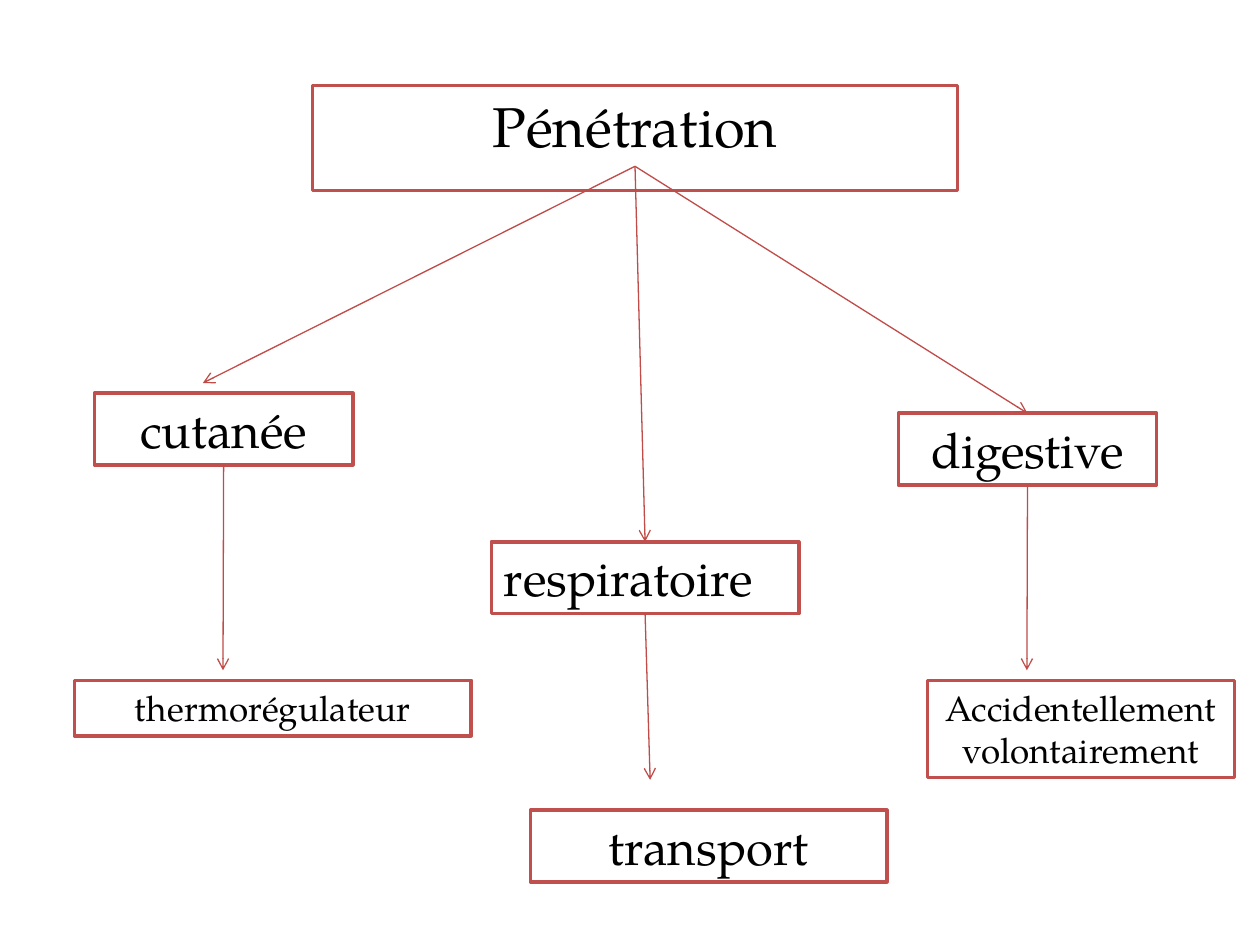
import pptx
import pptx.util
import pptx.dml.color
import pptx.enum.shapes
import pptx.enum.text
import pptx.oxml.ns
from lxml import etree

prs = pptx.Presentation()
prs.slide_width = pptx.util.Inches(10)
prs.slide_height = pptx.util.Inches(7.5)
COL = prs.slide_width / 100
ROW = prs.slide_height / 75
s = prs.slides.add_slide(prs.slide_layouts[5])


def rgb(value):
    return pptx.dml.color.RGBColor.from_string(value)


def write(sp, text, size=28, align="CENTER", font="TeX Gyre Pagella", color="000000"):
    tf = sp.text_frame
    tf.word_wrap = True
    tf.auto_size = pptx.enum.text.MSO_AUTO_SIZE.SHAPE_TO_FIT_TEXT
    tf.vertical_anchor = pptx.enum.text.MSO_ANCHOR.TOP
    for i, line in enumerate(text.split("\n")):
        p = tf.add_paragraph() if i else tf.paragraphs[0]
        p.alignment = pptx.enum.text.PP_ALIGN[align]
        p.space_before = pptx.util.Pt(0)
        r = p.add_run()
        r.text = line
        r.font.size = pptx.util.Pt(size)
        r.font.name = font
        r.font.color.rgb = rgb(color)


boxes = [
    ("Pénétration", 24.8, 6.8, 51.2, 6.4, 32, "CENTER"),
    ("cutanée", 7.5, 31.2, 20.5, 5.7, 28, "CENTER"),
    ("respiratoire", 39, 43, 24.4, 5.7, 28, "LEFT"),
    ("digestive", 71.3, 32.8, 20.5, 5.7, 28, "CENTER"),
    ("thermorégulateur", 5.9, 54, 31.5, 4.4, 20, "CENTER"),
    ("transport", 42.1, 64.3, 28.3, 5.7, 28, "CENTER"),
    ("Accidentellement\nvolontairement", 73.6, 54, 24.4, 7.7, 20, "CENTER"),
]
nodes = {}
for text, x, y, w, h, size, align in boxes:
    if not nodes:
        sp = s.shapes.title
    else:
        sp = s.shapes.add_shape(pptx.enum.shapes.MSO_SHAPE.RECTANGLE, 0, 0, 0, 0)
        sp.shadow.inherit = False
    sp.left, sp.top = round(x * COL), round(y * ROW)
    sp.width, sp.height = round(w * COL), round(h * ROW)
    sp.fill.solid()
    sp.fill.fore_color.rgb = rgb("FFFFFF")
    sp.line.color.rgb = rgb("C0504D")
    sp.line.width = pptx.util.Pt(2)
    write(sp, text, size=size, align=align)
    nodes[text] = sp

arrows = [
    ("Pénétration", 16.1, 30.4, None),
    ("Pénétration", 51.2, 43, "respiratoire"),
    ("Pénétration", 81.5, 32.8, "digestive"),
    ("cutanée", 17.7, 53.2, None),
    ("respiratoire", 51.6, 61.9, None),
    ("digestive", 81.5, 53.2, None),
]
for start, x, y, end in arrows:
    cx = s.shapes.add_connector(
        pptx.enum.shapes.MSO_CONNECTOR.STRAIGHT, 0, 0, round(x * COL), round(y * ROW))
    cx.begin_connect(nodes[start], 2)
    if end:
        cx.end_connect(nodes[end], 0)
    cx.line.color.rgb = rgb("BF4C48")
    cx.line.width = pptx.util.Pt(0.75)
    ln = cx.line._get_or_add_ln()
    etree.SubElement(ln, pptx.oxml.ns.qn("a:tailEnd"), type="arrow")
    etree.SubElement(cx._element.spPr, pptx.oxml.ns.qn("a:effectLst"))

prs.save("out.pptx")
